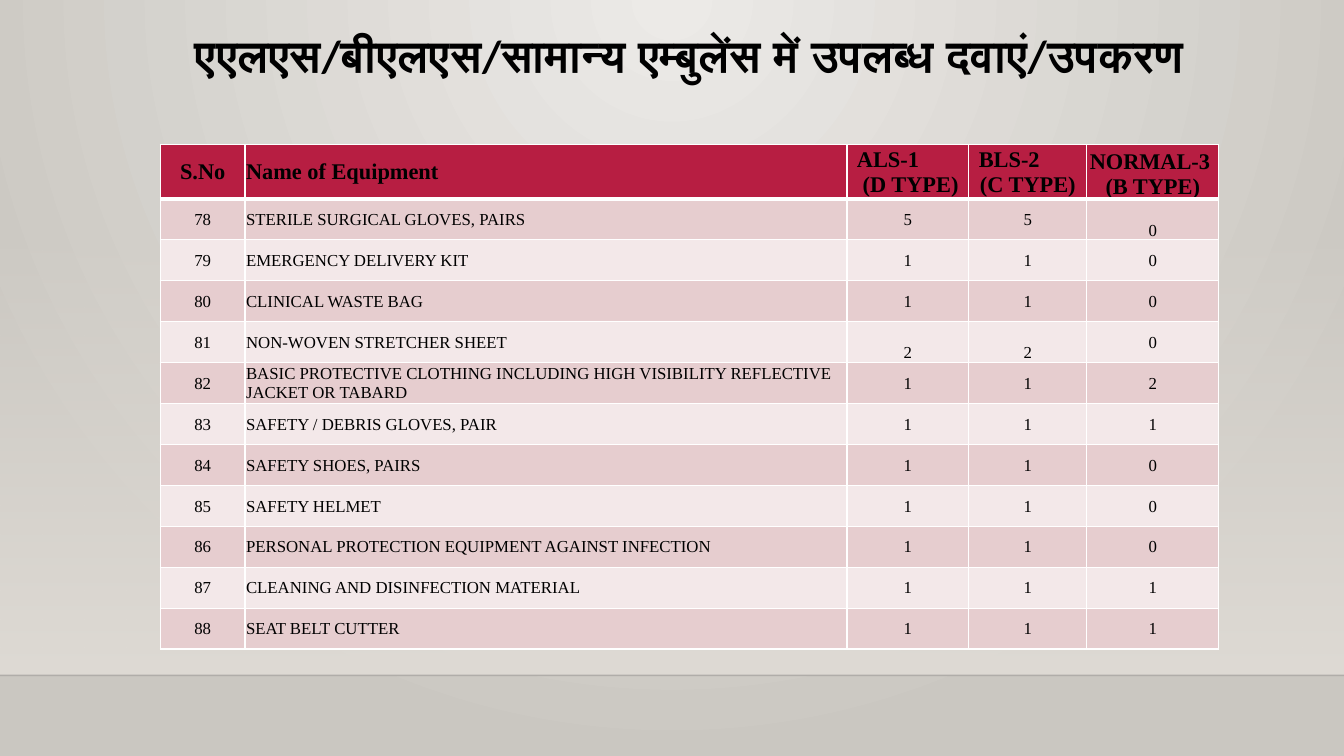
from pptx import Presentation
from pptx.dml.color import RGBColor
from pptx.enum.shapes import MSO_CONNECTOR, MSO_SHAPE
from pptx.enum.text import MSO_ANCHOR, PP_ALIGN
from pptx.oxml.ns import qn
from pptx.util import Pt
from lxml import etree

LEFT, CENTER = PP_ALIGN.LEFT, PP_ALIGN.CENTER
TOP, MIDDLE, BOTTOM = MSO_ANCHOR.TOP, MSO_ANCHOR.MIDDLE, MSO_ANCHOR.BOTTOM
RECT, STRAIGHT = MSO_SHAPE.RECTANGLE, MSO_CONNECTOR.STRAIGHT

WIDTH, HEIGHT = 960, 540
FLOOR_Y = 482.4
HEADER_H, ROW_H = 36.4, 29.22
COL_WIDTHS = [60.6, 429.9, 87.1, 84.3, 94.3]
HEADERS = ["S.No", "Name of Equipment", "ALS-1\n (D TYPE)", "BLS-2\n(C TYPE)",
           "NORMAL-3 \n(B TYPE)"]
FIRST_NUMBER = 78
EQUIPMENT = [
    ("STERILE SURGICAL GLOVES, PAIRS", 5, 5, 0),
    ("EMERGENCY DELIVERY KIT", 1, 1, 0),
    ("CLINICAL WASTE BAG", 1, 1, 0),
    ("NON-WOVEN STRETCHER SHEET", 2, 2, 0),
    ("BASIC PROTECTIVE CLOTHING INCLUDING HIGH VISIBILITY REFLECTIVE JACKET OR TABARD",
     1, 1, 2),
    ("SAFETY / DEBRIS GLOVES, PAIR", 1, 1, 1),
    ("SAFETY SHOES, PAIRS", 1, 1, 0),
    ("SAFETY HELMET", 1, 1, 0),
    ("PERSONAL PROTECTION EQUIPMENT AGAINST INFECTION", 1, 1, 0),
    ("CLEANING AND DISINFECTION MATERIAL", 1, 1, 1),
    ("SEAT BELT CUTTER", 1, 1, 1),
]
BOTTOM_CELLS = {(0, 4), (1, 4), (4, 2), (4, 3)}
INDENTED_HEADERS = {(0, 2), (0, 3)}


def rgb(value):
    """Turn a hex string into a colour."""
    return RGBColor.from_string(value)


def add_alpha(element, percent):
    """Set the opacity of the first colour inside an element."""
    color = element.find(".//" + qn("a:srgbClr"))
    etree.SubElement(color, qn("a:alpha"), val=str(percent * 1000))


def fill_gradient(fill, *colors):
    """Give a fill a two-stop gradient."""
    fill.gradient()
    for stop, color in zip(fill.gradient_stops, colors):
        stop.color.rgb = rgb(color)


def write(tf, text, size=12, font="Times New Roman", color="000000", bold=False,
          align=CENTER, spacing=None, first_indent=None):
    """Write lines of text as formatted paragraphs."""
    for i, line in enumerate(text.split("\n")):
        p = tf.add_paragraph() if i else tf.paragraphs[0]
        p.alignment = align
        if spacing:
            p.line_spacing = spacing
        if first_indent and i == 0:
            p.alignment = LEFT
            p._p.get_or_add_pPr().set("marL", str(Pt(first_indent)))
        r = p.add_run()
        r.text = line
        r.font.name, r.font.size, r.font.bold = font, Pt(size), bold
        r.font.color.rgb = rgb(color)


def add_borders(cell, bottom_width):
    """Draw white borders round a table cell."""
    tc_pr = cell._tc.get_or_add_tcPr()
    for side in "LRTB":
        width = bottom_width if side == "B" else 1
        ln = etree.SubElement(tc_pr, qn("a:ln" + side), w=str(Pt(width)))
        fill = etree.SubElement(ln, qn("a:solidFill"))
        etree.SubElement(fill, qn("a:srgbClr"), val="FFFFFF")


def add_backdrop(s, x, y, w, h):
    """Paint the background, the wall fading down and the floor line."""
    fill_gradient(s.background.fill, "ECEAE7", "CAC7C1")
    lin = s.element.find(".//" + qn("a:lin"))
    circle = etree.Element(qn("a:path"), path="circle")
    etree.SubElement(circle, qn("a:fillToRect"), l="43000", t="0", r="43000", b="100000")
    lin.getparent().replace(lin, circle)

    wall_top = y + 159.1
    wall = s.shapes.add_shape(RECT, Pt(x), Pt(wall_top), Pt(w), Pt(y + h - wall_top))
    wall.shadow.inherit = False
    wall.line.fill.background()
    fill_gradient(wall.fill, "DFDBD5", "DFDBD5")
    wall.fill.gradient_angle = 270
    add_alpha(wall._element.spPr, 0)

    floor = s.shapes.add_connector(STRAIGHT, Pt(x), Pt(y + h), Pt(x + w), Pt(y + h))
    floor.line.width = Pt(1)
    floor.line.color.rgb = rgb("000001")
    add_alpha(floor._element.spPr, 20)
    etree.SubElement(floor._element.spPr, qn("a:effectLst"))


def add_title(s, x, y, w, h):
    """Place the centred slide title."""
    sp = s.shapes.add_textbox(Pt(x), Pt(y), Pt(w), Pt(h))
    tf = sp.text_frame
    tf.word_wrap = True
    tf.vertical_anchor = TOP
    write(tf, "एएलएस/बीएलएस/सामान्य एम्बुलेंस में उपलब्ध दवाएं/उपकरण",
          size=32, font="Calibri", bold=True, spacing=0.9)


def add_equipment_table(s, x, y, w):
    """Place the equipment table with its header and banded rows."""
    rows = [HEADERS] + [(n, *item) for n, item in enumerate(EQUIPMENT, FIRST_NUMBER)]
    h = HEADER_H + ROW_H * len(EQUIPMENT)
    table = s.shapes.add_table(len(rows), len(HEADERS), Pt(x), Pt(y), Pt(w), Pt(h)).table
    for column, width in zip(table.columns, COL_WIDTHS):
        column.width = Pt(width)
    for i, values in enumerate(rows):
        header = i == 0
        table.rows[i].height = Pt(HEADER_H if header else ROW_H)
        band = "B71E42" if header else ("F3E8E9", "E6CDCF")[i % 2]
        for j, value in enumerate(values):
            cell = table.cell(i, j)
            add_borders(cell, 3 if header else 1)
            cell.fill.solid()
            cell.fill.fore_color.rgb = rgb(band)
            cell.margin_left = cell.margin_right = cell.margin_top = Pt(0.7)
            cell.margin_bottom = 0
            cell.vertical_anchor = BOTTOM if (i, j) in BOTTOM_CELLS else MIDDLE
            write(cell.text_frame, str(value), size=16 if header else 12, bold=header,
                  align=LEFT if j == 1 else CENTER,
                  first_indent=6.5 if (i, j) in INDENTED_HEADERS else None)


def main():
    """Build and save the slide."""
    prs = Presentation()
    prs.slide_width, prs.slide_height = Pt(WIDTH), Pt(HEIGHT)
    s = prs.slides.add_slide(prs.slide_layouts[6])
    add_backdrop(s, 0, 0, WIDTH, FLOOR_Y)
    add_title(s, 114.5, 20.9, 756, 82.8)
    add_equipment_table(s, 114.5, 103, sum(COL_WIDTHS))
    prs.save("out.pptx")


if __name__ == "__main__":
    main()
